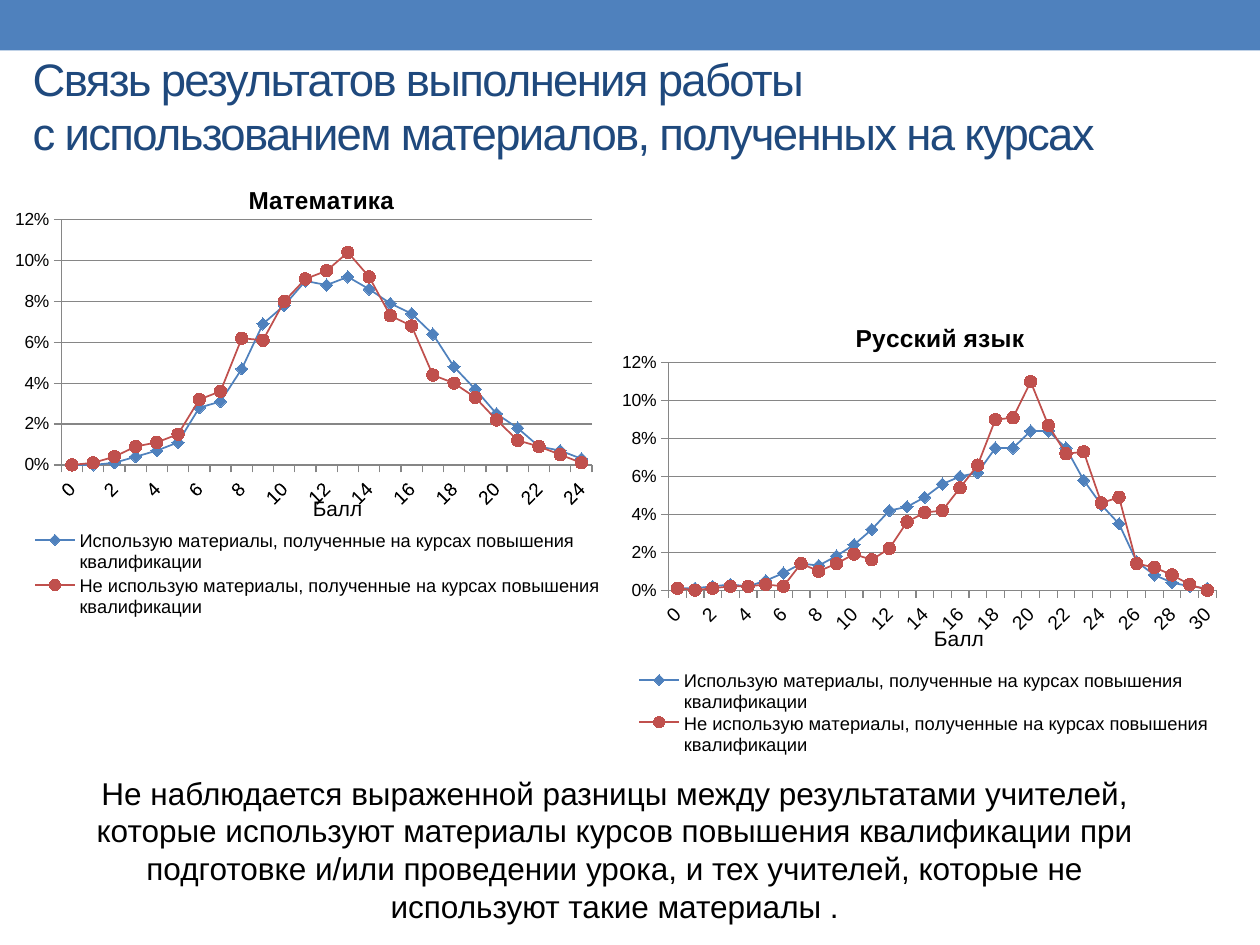
from dataclasses import dataclass

from lxml.etree import SubElement
from pptx import Presentation
from pptx.chart.data import CategoryChartData
from pptx.dml.color import RGBColor
from pptx.enum.chart import (XL_CHART_TYPE, XL_LEGEND_POSITION,
                             XL_MARKER_STYLE, XL_TICK_MARK)
from pptx.enum.shapes import MSO_SHAPE
from pptx.enum.text import MSO_ANCHOR, PP_ALIGN
from pptx.oxml import parse_xml
from pptx.oxml.ns import nsdecls, qn
from pptx.util import Inches, Pt

FONT = "Arial"
COLORS = {"band": "4F81BD", "title": "1F497D", "text": "000000", "grid": "868686",
          "users": "4F81BD", "others": "C0504D"}
WIDTH, HEIGHT = Inches(10), Inches(7.5)
CHART_TITLE_AT = (0.38, 0.01)
SERIES = (
    ("Использую материалы, полученные на курсах повышения квалификации",
     "users", XL_MARKER_STYLE.DIAMOND),
    ("Не использую материалы, полученные на курсах повышения квалификации",
     "others", XL_MARKER_STYLE.CIRCLE),
)


@dataclass
class Box:
    """Place and size as percentages of the slide."""
    x: float
    y: float
    w: float
    h: float

    def lengths(self) -> tuple:
        return (int(WIDTH * self.x / 100), int(HEIGHT * self.y / 100),
                int(WIDTH * self.w / 100), int(HEIGHT * self.h / 100))


@dataclass
class ScoreChart:
    """Score distribution; values are tenths of a percent, layouts are chart shares."""
    title: str
    box: Box
    plot: tuple
    axis_title: tuple
    legend: tuple
    users: tuple
    others: tuple


CHARTS = (
    ScoreChart(
        "Математика", Box(1.2, 18.53, 47.2, 47.2),
        (0.07, 0.1, 0.9, 0.55), (0.49, 0.71), (0.02, 0.79, 0.97, 0.21),
        (0, 0, 1, 4, 7, 11, 28, 31, 47, 69, 78, 90, 88, 92, 86, 79, 74, 64, 48,
         37, 25, 18, 9, 7, 3),
        (0, 1, 4, 9, 11, 15, 32, 36, 62, 61, 80, 91, 95, 104, 92, 73, 68, 44, 40,
         33, 22, 12, 9, 5, 1)),
    ScoreChart(
        "Русский язык", Box(49.2, 33.2, 48.3, 47.2),
        (0.08, 0.11, 0.9, 0.51), (0.51, 0.69), (0.02, 0.8, 0.96, 0.19),
        (1, 1, 2, 3, 2, 5, 9, 14, 13, 18, 24, 32, 42, 44, 49, 56, 60, 62, 75, 75,
         84, 84, 75, 58, 45, 35, 15, 8, 4, 2, 1),
        (1, 0, 1, 2, 2, 3, 2, 14, 10, 14, 19, 16, 22, 36, 41, 42, 54, 66, 90, 91,
         110, 87, 72, 73, 46, 49, 14, 12, 8, 3, 0)),
)


def rgb(name: str) -> RGBColor:
    return RGBColor.from_string(COLORS[name])


def set_font(font, size: float, color: str = "text", bold: bool = False) -> None:
    font.name, font.size, font.bold = FONT, Pt(size), bold
    font.color.rgb = rgb(color)


def set_layout(element, shares: tuple, before: tuple, inner: bool = False) -> None:
    """Give a chart part a manual layout, placed ahead of the given tags."""
    for old in element.findall(qn("c:layout")):
        element.remove(old)
    layout = parse_xml(f"<c:layout {nsdecls('c')}><c:manualLayout/></c:layout>")
    manual = layout[0]
    settings = [("layoutTarget", "inner")] if inner else []
    settings += [("xMode", "edge"), ("yMode", "edge")]
    settings += zip("xywh", shares)
    for tag, value in settings:
        SubElement(manual, qn(f"c:{tag}")).set("val", str(value))
    follower = next(e for e in element if e.tag in [qn(f"c:{t}") for t in before])
    follower.addprevious(layout)


def add_title_text(owner, text: str, size: float, bold: bool, place: tuple) -> None:
    r = owner.text_frame.paragraphs[0].add_run()
    r.text = text
    set_font(r.font, size, bold=bold)
    set_layout(owner._element, place, ("overlay", "spPr", "txPr"))


def style_axis(axis, size: float) -> None:
    set_font(axis.tick_labels.font, size)
    axis.major_tick_mark = XL_TICK_MARK.OUTSIDE
    axis.minor_tick_mark = XL_TICK_MARK.NONE
    axis.format.line.color.rgb = rgb("grid")


def add_score_chart(slide, item: ScoreChart) -> None:
    data = CategoryChartData(number_format="0.0%")
    data.categories = [str(score) for score in range(len(item.users))]
    for (name, _, _), values in zip(SERIES, (item.users, item.others)):
        data.add_series(name, [v / 1000 for v in values])
    chart = slide.shapes.add_chart(XL_CHART_TYPE.LINE_MARKERS,
                                   *item.box.lengths(), data).chart
    set_font(chart.font, 10)
    chart.has_title = True
    chart.chart_title.include_in_layout = False
    add_title_text(chart.chart_title, item.title, 14, True, CHART_TITLE_AT)

    # Axes
    cat, val = chart.category_axis, chart.value_axis
    style_axis(cat, 11)
    style_axis(val, 10)
    cat.has_title = True
    add_title_text(cat.axis_title, "Балл", 12, False, item.axis_title)
    cat._element.find(qn("c:txPr")).find(qn("a:bodyPr")).set("rot", "-2700000")
    skip = parse_xml(f'<c:tickLblSkip {nsdecls("c")} val="2"/>')
    cat._element.find(qn("c:noMultiLvlLbl")).addprevious(skip)
    val.minimum_scale, val.maximum_scale, val.major_unit = 0, 0.12, 0.02
    val.tick_labels.number_format = "0%"
    val.tick_labels.number_format_is_linked = False
    val.has_major_gridlines = True
    val.major_gridlines.format.line.color.rgb = rgb("grid")

    # Series
    plot = chart.plots[0]
    plot.vary_by_categories = False
    for series, (_, color, marker) in zip(plot.series, SERIES):
        series.smooth = False
        series.format.line.color.rgb = rgb(color)
        series.format.line.width = Pt(1)
        series.marker.style, series.marker.size = marker, 7
        series.marker.format.fill.solid()
        series.marker.format.fill.fore_color.rgb = rgb(color)
        series.marker.format.line.color.rgb = rgb(color)

    # Legend and plot area
    chart.has_legend = True
    chart.legend.position = XL_LEGEND_POSITION.BOTTOM
    chart.legend.include_in_layout = False
    set_font(chart.legend.font, 10.5)
    set_layout(chart.legend._element, item.legend, ("overlay",))
    plot_area = chart._chartSpace.chart.plotArea
    set_layout(plot_area, item.plot, ("lineChart",), inner=True)


def add_band(slide, box: Box) -> None:
    sp = slide.shapes.add_shape(MSO_SHAPE.RECTANGLE, *box.lengths())
    sp.shadow.inherit = False
    sp.fill.solid()
    sp.fill.fore_color.rgb = rgb("band")
    sp.line.fill.background()


def fill_title(slide, box: Box, lines: tuple) -> None:
    sp = slide.shapes.title
    sp.left, sp.top, sp.width, sp.height = box.lengths()
    tf = sp.text_frame
    tf.word_wrap, tf.vertical_anchor = True, MSO_ANCHOR.MIDDLE
    p = tf.paragraphs[0]
    p.alignment = PP_ALIGN.LEFT
    for i, line in enumerate(lines):
        if i:
            p.add_line_break()
        r = p.add_run()
        r.text = line
        set_font(r.font, 26, "title")
        r._r.get_or_add_rPr().set("spc", "-100")


def add_conclusion(slide, box: Box, text: str) -> None:
    tf = slide.shapes.add_textbox(*box.lengths()).text_frame
    tf.word_wrap = True
    p = tf.paragraphs[0]
    p.alignment = PP_ALIGN.CENTER
    r = p.add_run()
    r.text = text
    set_font(r.font, 18)


prs = Presentation()
prs.slide_width, prs.slide_height = WIDTH, HEIGHT
s = prs.slides.add_slide(prs.slide_layouts[5])
add_band(s, Box(0, 0, 100, 5.33))
fill_title(s, Box(1.6, 5.87, 94.5, 10.53),
           ("Связь результатов выполнения работы",
            "с использованием материалов, полученных на курсах"))
for item in CHARTS:
    add_score_chart(s, item)
add_conclusion(s, Box(5.1, 81.2, 87.4, 17.47),
               "Не наблюдается выраженной разницы между результатами учителей, "
               "которые используют материалы курсов повышения квалификации при "
               "подготовке и/или проведении урока, и тех учителей, которые не "
               "используют такие материалы .")
prs.save("out.pptx")
